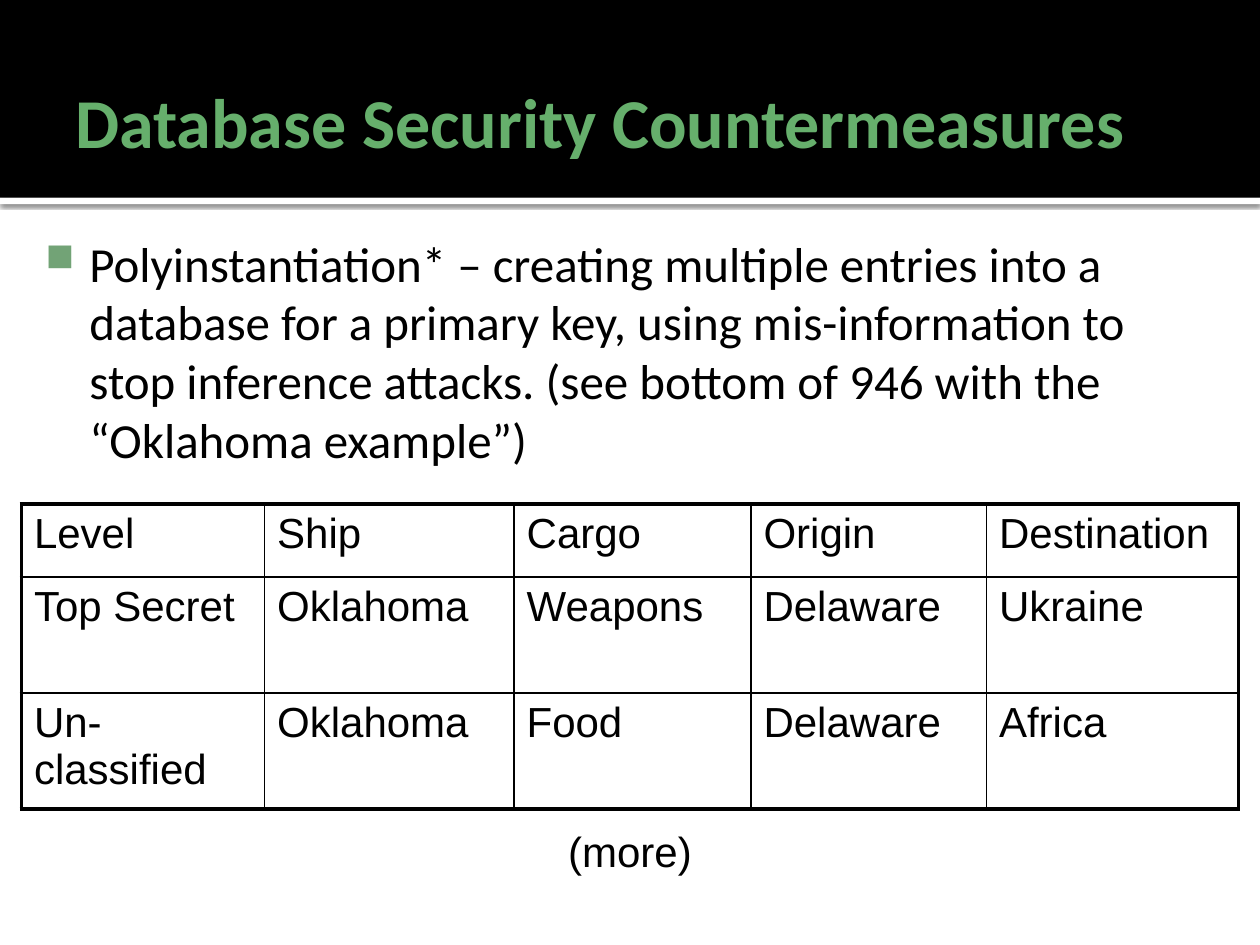
import pptx
import pptx.dml.color
import pptx.enum.shapes
import pptx.enum.text
import pptx.oxml
import pptx.oxml.ns
import pptx.util
from dataclasses import dataclass

Inches, Pt = pptx.util.Inches, pptx.util.Pt
Align, Anchor = pptx.enum.text.PP_ALIGN, pptx.enum.text.MSO_ANCHOR

TITLE = "Database Security Countermeasures"
BODY = (
    "Polyinstantiation* – creating multiple entries into a database for a primary key, "
    "using mis-information to stop inference attacks. "
    "(see bottom of 946 with the “Oklahoma example”)"
)
ROWS = [
    ["Level", "Ship", "Cargo", "Origin", "Destination"],
    ["Top Secret", "Oklahoma", "Weapons", "Delaware", "Ukraine"],
    ["Un-classified", "Oklahoma", "Food", "Delaware", "Africa"],
]
MORE = "(more)"


@dataclass(frozen=True)
class Theme:
    black: str = "000000"
    white: str = "FFFFFF"
    title: str = "66AF6C"
    bullet: str = "72A376"
    heading_font: str = "Calibri"
    table_font: str = "Arial"
    title_size: int = 40
    body_size: int = 28
    table_size: int = 24
    outer_line: float = 2.25
    inner_line: float = 1


THEME = Theme()
WIDTH, HEIGHT = 10, 7.5
MARGIN = 0.17
CONTENT_WIDTH = WIDTH - 2 * MARGIN
HEADER_HEIGHT, STRIPE_HEIGHT = 1.57, 0.05
TABLE_TOP = 4
COLUMN_WIDTHS = [1.93, 1.98, 1.88, 1.87, 2]
ROW_HEIGHTS = [0.58, 0.92, 0.92]


def color(value):
    return pptx.dml.color.RGBColor.from_string(value)


def xml(tag, attributes="", content=""):
    namespace = pptx.oxml.ns.nsdecls("a")
    return pptx.oxml.parse_xml(f"<a:{tag} {namespace} {attributes}>{content}</a:{tag}>")


def write_text(frame, text, *, font, size, fill=THEME.black, bold=False,
               align=Align.LEFT, anchor=Anchor.TOP, insets=(0.1, 0.05, 0.1, 0.05),
               bullet=None):
    """Fill a frame with one paragraph; insets run left, top, right, bottom."""
    frame.word_wrap = True
    frame.vertical_anchor = anchor
    (frame.margin_left, frame.margin_top,
     frame.margin_right, frame.margin_bottom) = map(Inches, insets)
    paragraph = frame.paragraphs[0]
    paragraph.alignment = align
    if bullet:
        properties = paragraph._p.get_or_add_pPr()
        properties.set("marL", str(Inches(0.48)))
        properties.set("indent", str(Inches(-0.35)))
        properties.append(xml("buClr", content=f'<a:srgbClr val="{THEME.bullet}"/>'))
        properties.append(xml("buSzPct", 'val="80000"'))
        properties.append(xml("buChar", f'char="{bullet}"'))
    run = paragraph.add_run()
    run.text = text
    run.font.name = font
    run.font.size = Pt(size)
    run.font.bold = bold
    run.font.color.rgb = color(fill)


def add_text(slide, box, text, **text_format):
    shape = slide.shapes.add_textbox(*map(Inches, box))
    write_text(shape.text_frame, text, **text_format)


def add_band(slide, top, height, fill):
    shape = slide.shapes.add_shape(
        pptx.enum.shapes.MSO_SHAPE.RECTANGLE,
        0, Inches(top), Inches(WIDTH), Inches(height))
    shape.shadow.inherit = False
    shape.fill.solid()
    shape.fill.fore_color.rgb = color(fill)
    shape.line.fill.background()
    return shape


def add_drop_shadow(shape):
    effects = shape._element.spPr.find(pptx.oxml.ns.qn("a:effectLst"))
    effects.append(xml(
        "outerShdw",
        f'blurRad="{Pt(2.5)}" dist="{Pt(0.8)}" dir="5400000" rotWithShape="0"',
        f'<a:srgbClr val="{THEME.black}"><a:alpha val="60000"/></a:srgbClr>'))


def set_borders(cell, outer_sides):
    """Draw all four borders, heavier where the side is on the table's edge."""
    properties = cell._tc.get_or_add_tcPr()
    for position, side in enumerate("LRTB"):
        width = THEME.outer_line if side in outer_sides else THEME.inner_line
        properties.insert(position, xml(
            f"ln{side}", f'w="{Pt(width)}"',
            f'<a:solidFill><a:srgbClr val="{THEME.black}"/></a:solidFill>'))


def add_ship_table(slide):
    last_row, last_column = len(ROWS) - 1, len(COLUMN_WIDTHS) - 1
    table = slide.shapes.add_table(
        len(ROWS), len(COLUMN_WIDTHS), Inches(MARGIN), Inches(TABLE_TOP),
        Inches(CONTENT_WIDTH), Inches(sum(ROW_HEIGHTS))).table
    table.first_row = table.horz_banding = False
    for column, width in zip(table.columns, COLUMN_WIDTHS):
        column.width = Inches(width)
    for row, height in zip(table.rows, ROW_HEIGHTS):
        row.height = Inches(height)
    for row_index, row in enumerate(ROWS):
        for column_index, text in enumerate(row):
            cell = table.cell(row_index, column_index)
            write_text(cell.text_frame, text, font=THEME.table_font, size=THEME.table_size)
            cell.fill.background()
            edges = {"L": column_index == 0, "R": column_index == last_column,
                     "T": row_index == 0, "B": row_index == last_row}
            set_borders(cell, [side for side, is_outer in edges.items() if is_outer])


def main():
    presentation = pptx.Presentation()
    presentation.slide_width = Inches(WIDTH)
    presentation.slide_height = Inches(HEIGHT)
    slide = presentation.slides.add_slide(presentation.slide_layouts[6])

    add_drop_shadow(add_band(slide, HEADER_HEIGHT, STRIPE_HEIGHT, THEME.white))
    add_band(slide, 0, HEADER_HEIGHT, THEME.black)
    add_text(slide, (0.5, 0.33, 9, 1.25), TITLE, font=THEME.heading_font,
             size=THEME.title_size, fill=THEME.title, bold=True,
             anchor=Anchor.MIDDLE, insets=(0.1, 0.05, 0.05, 0.05))
    add_text(slide, (MARGIN, 1.75, 9.58, 2.17), BODY, font=THEME.heading_font,
             size=THEME.body_size, insets=(0.06, 0.1, 0.1, 0.05), bullet="■")
    add_ship_table(slide)
    add_text(slide, (MARGIN, 6.5, CONTENT_WIDTH, 0.5), MORE, font=THEME.table_font,
             size=THEME.table_size, align=Align.CENTER)

    presentation.save("out.pptx")


if __name__ == "__main__":
    main()
